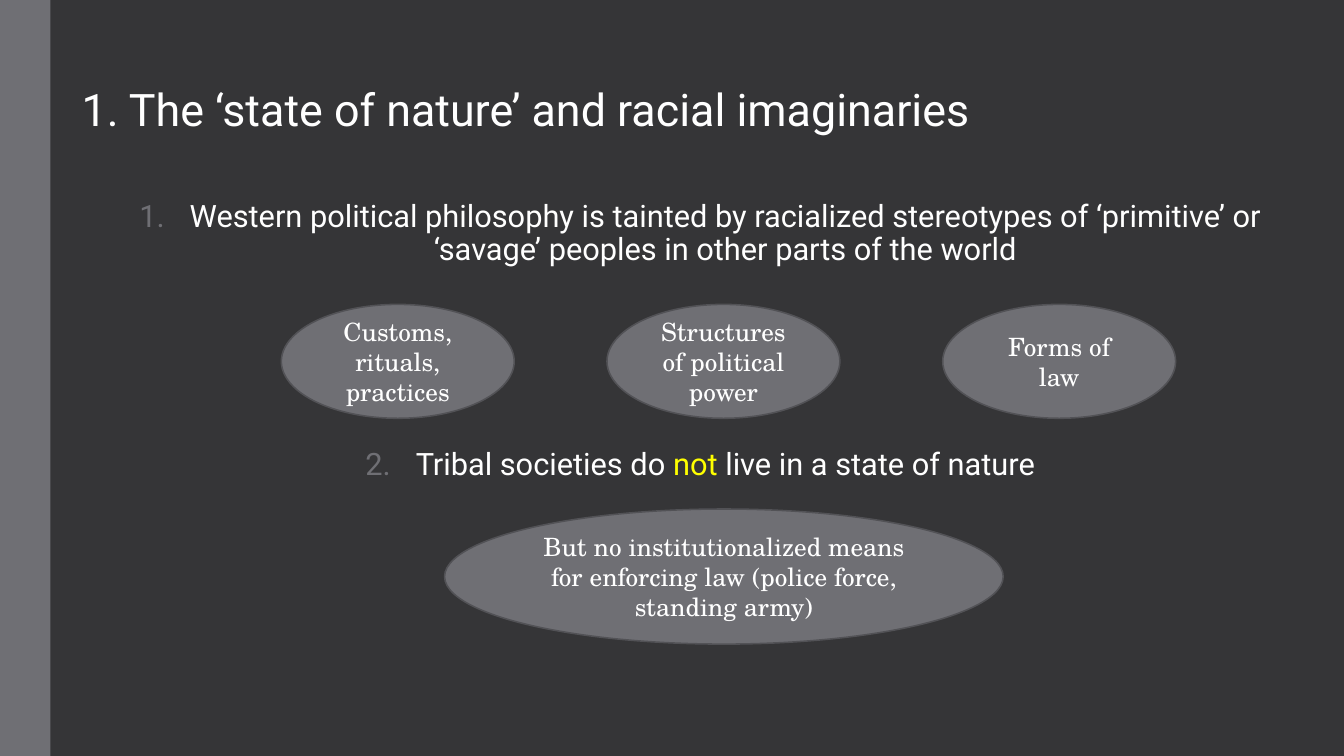
import pptx
import pptx.util
import pptx.dml.color
import pptx.enum.shapes
import pptx.enum.text
import lxml.etree

Inches, Pt = pptx.util.Inches, pptx.util.Pt
KIND = pptx.enum.shapes.MSO_SHAPE
ALIGN = pptx.enum.text.PP_ALIGN
ANCHOR = pptx.enum.text.MSO_ANCHOR
FIT = pptx.enum.text.MSO_AUTO_SIZE

COLORS = {"back": "353537", "gray": "6F6F74", "edge": "525256",
          "white": "FFFFFF", "mark": "FFFF00"}
SANS = {"name": "Roboto", "size": Pt(22)}
SERIF = {"name": "TeX Gyre Schola", "size": Pt(18)}
FRAME = {"word_wrap": True, "auto_size": FIT.NONE, "vertical_anchor": ANCHOR.TOP}

TITLE = "1. The ‘state of nature’ and racial imaginaries"
POINTS = [
    [("Western political philosophy is tainted by racialized stereotypes of "
      "‘primitive’ or ‘savage’ peoples in other parts of the world", "white")],
    [("Tribal societies do ", "white"), ("not", "mark"),
     (" live in a state of nature", "white")],
]
TRAITS = [(2.79, "Customs, rituals, practices"),
          (6.02, "Structures of political power"),
          (9.35, "Forms of law")]
LIMIT = "But no institutionalized means for enforcing law (police force, standing army)"


def color(name):
    return pptx.dml.color.RGBColor.from_string(COLORS[name])


def assign(item, values):
    for key, value in values.items():
        setattr(item, key, value)


def add_run(para, text, hue, font):
    run = para.add_run()
    run.text = text
    assign(run.font, font)
    run.font.color.rgb = color(hue)


def add_shape(slide, kind, box):
    shape = slide.shapes.add_shape(kind, *map(Inches, box))
    shape.shadow.inherit = False
    shape.fill.solid()
    shape.fill.fore_color.rgb = color("gray")
    return shape


def add_bar(slide):
    add_shape(slide, KIND.RECTANGLE, (0, 0, 0.5, 7.5)).line.fill.background()


def add_oval(slide, box, text):
    oval = add_shape(slide, KIND.OVAL, box)
    oval.line.color.rgb = color("edge")
    oval.line.width = Pt(1.1)
    assign(oval.text_frame, {"word_wrap": True, "vertical_anchor": ANCHOR.MIDDLE})
    para = oval.text_frame.paragraphs[0]
    para.alignment = ALIGN.CENTER
    add_run(para, text, "white", SERIF)


def set_title(slide):
    title = slide.shapes.title
    assign(title, {"left": Inches(0.71), "top": Inches(0.8),
                   "width": Inches(11.97), "height": Inches(0.65)})
    assign(title.text_frame, FRAME)
    para = title.text_frame.paragraphs[0]
    assign(para, {"alignment": ALIGN.LEFT, "line_spacing": 0.95, "space_before": Pt(0)})
    add_run(para, TITLE, "white", {**SANS, "size": Pt(32)})


def number(para):
    """Give the paragraph a gray automatic number with a hanging indent."""
    props = para._p.get_or_add_pPr()
    props.set("marL", str(Inches(1)))
    props.set("indent", str(Inches(-0.5)))
    space = pptx.oxml.ns.qn
    tint = lxml.etree.SubElement(props, space("a:buClr"))
    lxml.etree.SubElement(tint, space("a:srgbClr"), val=COLORS["gray"])
    lxml.etree.SubElement(props, space("a:buFont"), typeface=SANS["name"])
    lxml.etree.SubElement(props, space("a:buAutoNum"), type="arabicPeriod")


def add_points(slide):
    box = slide.shapes.add_textbox(*map(Inches, (0.71, 1.94, 11.97, 3)))
    frame = box.text_frame
    assign(frame, FRAME)
    for index, parts in enumerate(POINTS):
        para = frame.add_paragraph() if index else frame.paragraphs[0]
        # The wide gap leaves room for the row of ovals
        assign(para, {"alignment": ALIGN.CENTER, "line_spacing": 0.9,
                      "space_before": Pt(130 if index else 0)})
        number(para)
        for text, hue in parts:
            add_run(para, text, hue, SANS)


def main():
    deck = pptx.Presentation()
    assign(deck, {"slide_width": Inches(13.33), "slide_height": Inches(7.5)})
    slide = deck.slides.add_slide(deck.slide_layouts[5])
    slide.background.fill.solid()
    slide.background.fill.fore_color.rgb = color("back")
    add_bar(slide)
    set_title(slide)
    add_points(slide)
    for left, text in TRAITS:
        add_oval(slide, (left, 3.02, 2.31, 1.13), text)
    add_oval(slide, (4.41, 5.05, 5.54, 1.34), LIMIT)
    deck.save("out.pptx")


if __name__ == "__main__":
    main()
